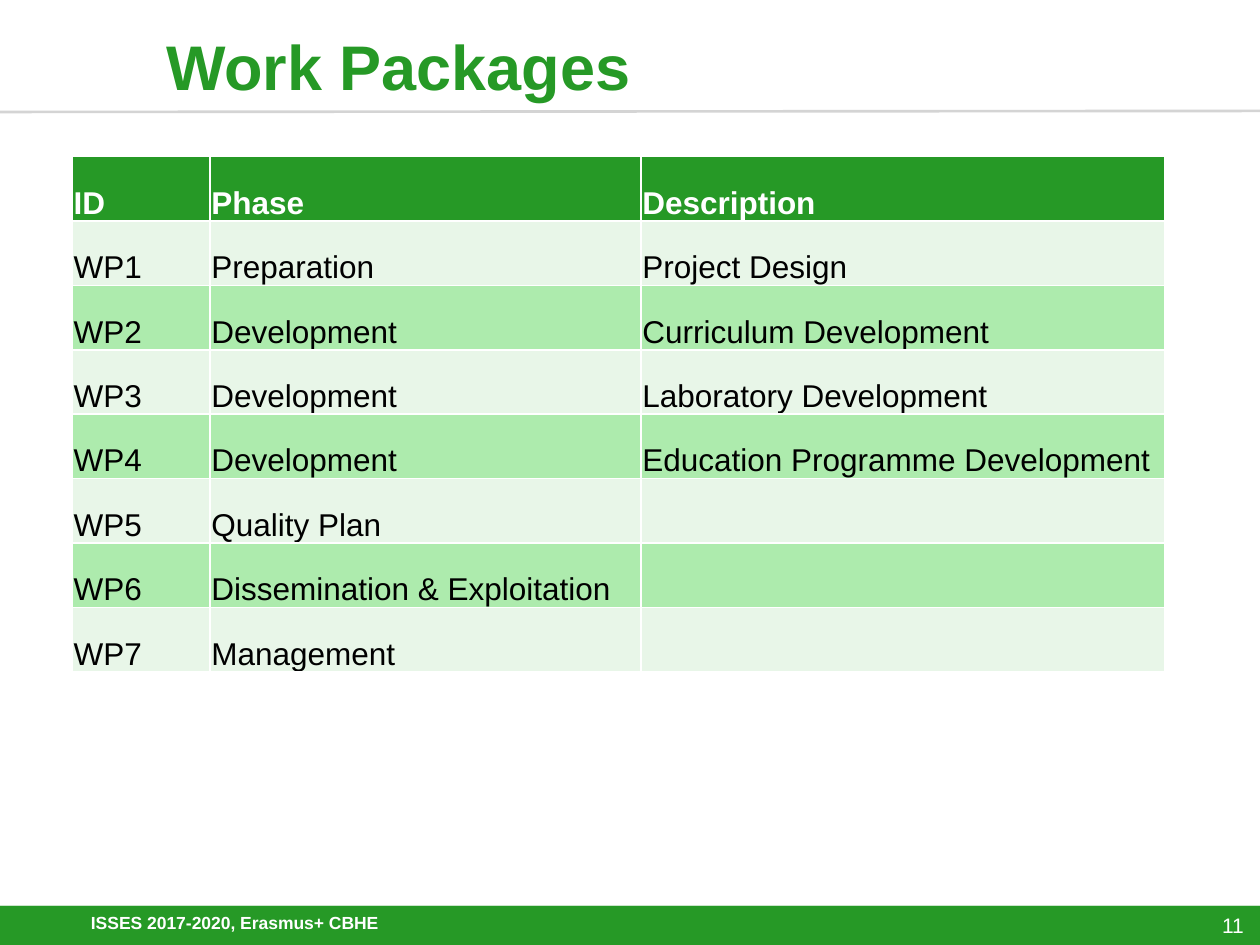
from dataclasses import dataclass
from lxml.etree import SubElement
from pptx import Presentation
from pptx.dml.color import RGBColor as Rgb
from pptx.enum.shapes import MSO_CONNECTOR as Conn, MSO_SHAPE as Form
from pptx.enum.text import MSO_ANCHOR as Anchor, PP_ALIGN as Align
from pptx.oxml.ns import qn
from pptx.util import Pt


@dataclass(frozen=True)
class Theme:
    font: str = "Arial"
    green: str = "269926"
    pale: str = "E8F6E8"
    mint: str = "ADEBAD"
    white: str = "FFFFFF"
    black: str = "000000"
    gray: str = "D4D4D4"
    title: float = 36
    body: float = 18
    page: float = 12
    foot: float = 10


@dataclass(frozen=True)
class Box:
    left: float
    top: float
    width: float
    height: float

    def place(self) -> tuple:
        return Pt(self.left), Pt(self.top), Pt(self.width), Pt(self.height)


@dataclass(frozen=True)
class Label:
    text: str
    box: Box
    size: float
    color: str
    bold: bool = False
    align: Align = Align.LEFT
    space: float = 1.0


THEME = Theme()
WIDTH, HEIGHT = 720, 540
BARS = [Box(0, 517.7, WIDTH, 22.3), Box(0, 517.7, WIDTH, 11.5)]
LABELS = [
    Label("Work Packages", Box(87.8, 5.8, 546.5, 62.6),
          THEME.title, THEME.green, True),
    Label("11", Box(666, 517, 51.8, 23),
          THEME.page, THEME.white, align=Align.RIGHT),
    Label("ISSES 2017-2020, Erasmus+ CBHE", Box(11.5, 517, 211.7, 23),
          THEME.foot, THEME.white, True, Align.RIGHT, 0.8),
]
COLS = [78.7, 246.3, 299.2]
ROW = 36.85
HEAD = ("ID", "Phase", "Description")
PLAN = [
    ("Preparation", "Project Design"),
    ("Development", "Curriculum Development"),
    ("Development", "Laboratory Development"),
    ("Development", "Education Programme Development"),
    ("Quality Plan", ""),
    ("Dissemination & Exploitation", ""),
    ("Management", ""),
]


def style(para, size: float, color: str, bold: bool) -> None:
    for run in para.runs:
        font = run.font
        font.name, font.size, font.bold = THEME.font, Pt(size), bold
        font.color.rgb = Rgb.from_string(color)


def paint(item, color: str) -> None:
    item.fill.solid()
    item.fill.fore_color.rgb = Rgb.from_string(color)


def add_bar(slide, box: Box) -> None:
    bar = slide.shapes.add_shape(Form.RECTANGLE, *box.place())
    bar.shadow.inherit = False
    paint(bar, THEME.green)
    bar.line.fill.background()


def add_rule(slide) -> None:
    rule = slide.shapes.add_connector(
        Conn.STRAIGHT, Pt(0), Pt(64), Pt(WIDTH), Pt(63.4))
    rule.line.color.rgb = Rgb.from_string(THEME.gray)
    rule.line.width = Pt(1.5)
    SubElement(rule._element.spPr, qn("a:effectLst"))


def add_label(slide, label: Label) -> None:
    frame = slide.shapes.add_textbox(*label.box.place()).text_frame
    frame.word_wrap = True
    frame.vertical_anchor = Anchor.MIDDLE
    frame.text = label.text
    para = frame.paragraphs[0]
    para.alignment = label.align
    para.line_spacing = label.space
    style(para, label.size, label.color, label.bold)


def add_edges(cell) -> None:
    props = cell._tc.get_or_add_tcPr()
    for spot, side in enumerate(("lnL", "lnR", "lnT", "lnB")):
        edge = props.makeelement(qn(f"a:{side}"), {"w": str(Pt(1))})
        fill = SubElement(edge, qn("a:solidFill"))
        SubElement(fill, qn("a:srgbClr"), val=THEME.white)
        props.insert(spot, edge)


def fill_cell(cell, text: str, fill: str, color: str, bold: bool) -> None:
    cell.text_frame.text = text
    cell.vertical_anchor = Anchor.BOTTOM
    cell.margin_left = cell.margin_right = cell.margin_top = Pt(0.7)
    cell.margin_bottom = Pt(0)
    paint(cell, fill)
    add_edges(cell)
    style(cell.text_frame.paragraphs[0], THEME.body, color, bold)


def add_plan(slide) -> None:
    rows = [HEAD] + [(f"WP{num}", *row) for num, row in enumerate(PLAN, 1)]
    box = Box(41.4, 89.4, sum(COLS), ROW * len(rows))
    table = slide.shapes.add_table(len(rows), len(COLS), *box.place()).table
    for col, width in zip(table.columns, COLS):
        col.width = Pt(width)
    for num, row in enumerate(rows):
        table.rows[num].height = Pt(ROW)
        band = THEME.pale if num % 2 else THEME.mint
        look = (band, THEME.black, False) if num else (
            THEME.green, THEME.white, True)
        for col, text in enumerate(row):
            fill_cell(table.cell(num, col), text, *look)


def main() -> None:
    deck = Presentation()
    deck.slide_width, deck.slide_height = Pt(WIDTH), Pt(HEIGHT)
    slide = deck.slides.add_slide(deck.slide_layouts[6])
    for bar in BARS:
        add_bar(slide, bar)
    add_rule(slide)
    for label in LABELS:
        add_label(slide, label)
    add_plan(slide)
    deck.save("out.pptx")


if __name__ == "__main__":
    main()
